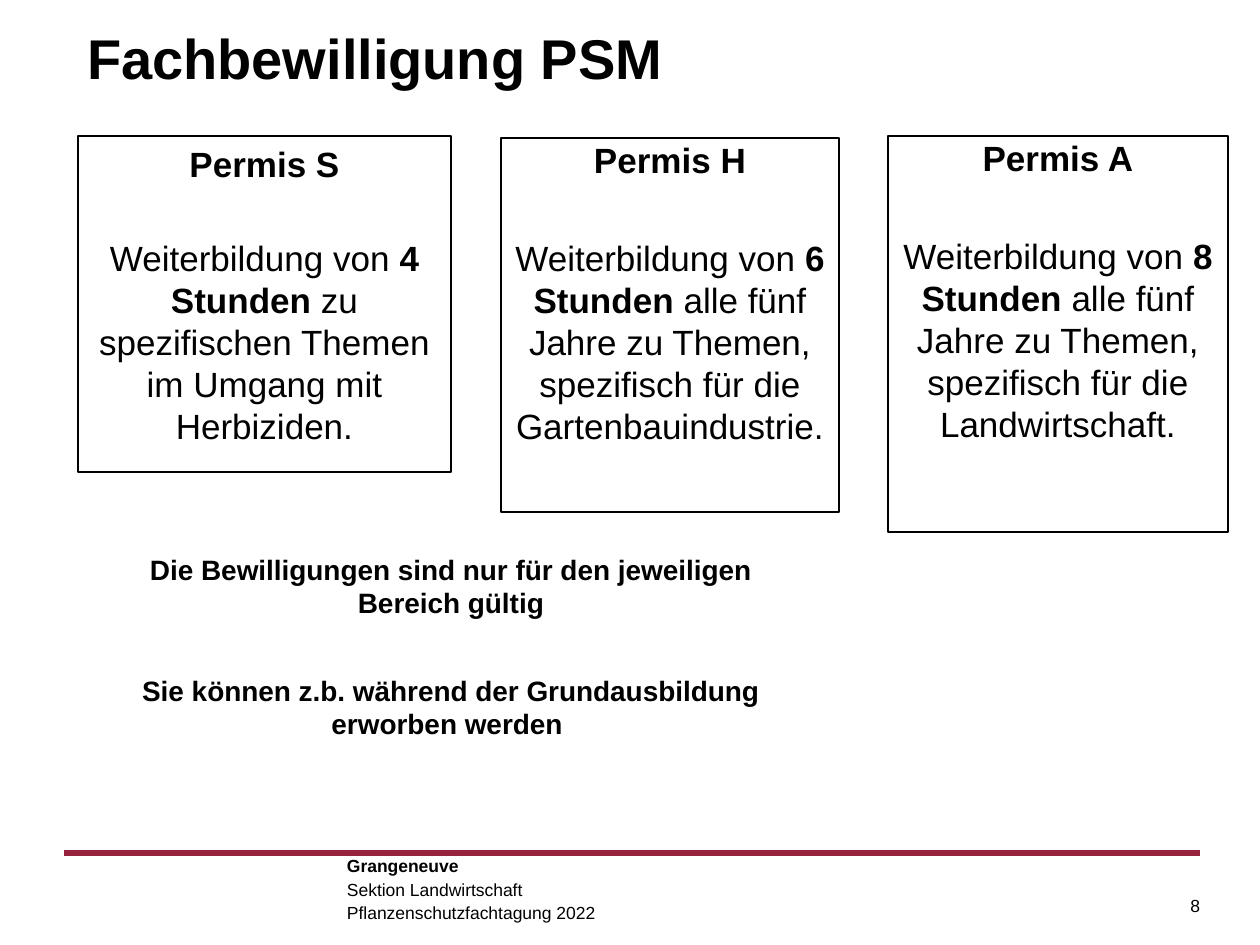
"""Build the slide on the three plant protection permits."""
from lxml import etree
from pptx import Presentation
from pptx.dml.color import RGBColor
from pptx.enum import shapes, text
from pptx.oxml.ns import qn
from pptx.util import Emu, Pt

BLACK = RGBColor(0x00, 0x00, 0x00)
CRIMSON = RGBColor(0x97, 0x23, 0x3F)
LEFT, CENTER, RIGHT = text.PP_ALIGN.LEFT, text.PP_ALIGN.CENTER, text.PP_ALIGN.RIGHT
PX_PER_INCH = 126


def px(n):
    """Turn pixels into EMU."""
    return Emu(round(n * 914400 / PX_PER_INCH))


class SlideBuilder:
    """Hold the style and the current slide."""

    font = "Arial"

    def __init__(self, prs):
        """Add a title-only slide."""
        self.slide = prs.slides.add_slide(prs.slide_layouts[5])

    def frame(self, sp, inset_x=0, inset_y=0):
        """Prepare a wrapped, top-anchored text frame."""
        tf = sp.text_frame
        tf.word_wrap = True
        tf.auto_size = text.MSO_AUTO_SIZE.NONE
        tf.vertical_anchor = text.MSO_ANCHOR.TOP
        tf.margin_left = tf.margin_right = px(inset_x)
        tf.margin_top = tf.margin_bottom = px(inset_y)
        return tf

    def paragraph(self, tf, runs, size, align=LEFT, pitch=None, before=0):
        """Fill the first or a further paragraph with (text, bold) runs."""
        p = tf.add_paragraph() if tf.paragraphs[0].runs else tf.paragraphs[0]
        p.alignment = align
        p.space_before = Pt(before)
        if pitch:
            p.line_spacing = Pt(pitch)
        for content, bold in runs:
            r = p.add_run()
            r.text = content
            r.font.name, r.font.size, r.font.bold = self.font, Pt(size), bold
            r.font.color.rgb = BLACK

    def title(self, content, x, y, w, h):
        """Place and fill the title placeholder."""
        sp = self.slide.shapes.title
        sp.left, sp.top, sp.width, sp.height = map(px, (x, y, w, h))
        self.paragraph(self.frame(sp, 13, 6), [(content, True)], 32, pitch=37)

    def textbox(self, x, y, w, h):
        """Add a text box and return its frame."""
        return self.frame(self.slide.shapes.add_textbox(*map(px, (x, y, w, h))))

    def permit(self, box, insets, gap, letter, hours, rest):
        """Add an outlined box that describes one permit."""
        sp = self.slide.shapes.add_shape(shapes.MSO_SHAPE.RECTANGLE, *map(px, box))
        sp.shadow.inherit = False
        sp.fill.background()
        sp.line.color.rgb = BLACK
        sp.line.width = Pt(0.75)
        tf = self.frame(sp, *insets)
        self.paragraph(tf, [(f"Permis {letter}", True)], 20, CENTER, 24)
        body = [("Weiterbildung von ", False), (f"{hours} Stunden", True), (rest, False)]
        self.paragraph(tf, body, 20, CENTER, 24, gap)

    def rule(self, x1, x2, y):
        """Draw the horizontal footer line."""
        line = self.slide.shapes.add_connector(
            shapes.MSO_CONNECTOR.STRAIGHT, *map(px, (x1, y, x2, y)))
        line.line.color.rgb = CRIMSON
        line.line.width = Pt(3)
        etree.SubElement(line._element.spPr, qn("a:effectLst"))


def main():
    """Build and save the presentation."""
    prs = Presentation()
    prs.slide_width, prs.slide_height = px(1260), px(945)
    s = SlideBuilder(prs)

    s.title("Fachbewilligung PSM", 74, 20, 1135, 66)
    permits = [
        ((78, 136, 373, 336), (13, 6), 30, "S", 4,
         " zu spezifischen Themen im Umgang mit Herbiziden."),
        ((501, 138, 338, 374), (0, 0), 32, "H", 6,
         " alle fünf Jahre zu Themen, spezifisch für die Gartenbauindustrie."),
        ((888, 136, 340, 396), (0, 0), 32, "A", 8,
         " alle fünf Jahre zu Themen, spezifisch für die Landwirtschaft."),
    ]
    for permit in permits:
        s.permit(*permit)

    notes = s.textbox(99, 553, 704, 189)
    for content, gap in (
        ("Die Bewilligungen sind nur für den jeweiligen Bereich gültig", 0),
        ("Sie können z.b. während der Grundausbildung erworben werden ", 31),
    ):
        s.paragraph(notes, [(content, True)], 16, CENTER, 19, gap)

    s.rule(64, 1200, 853)
    footer = s.textbox(347, 853, 661, 70)
    for content, bold in (
        ("Grangeneuve", True),
        ("Sektion Landwirtschaft", False),
        ("Pflanzenschutzfachtagung 2022", False),
    ):
        s.paragraph(footer, [(content, bold)], 10, pitch=13.4)
    s.paragraph(s.textbox(1144, 895, 56, 22), [("8", False)], 10, RIGHT)

    prs.save("out.pptx")


if __name__ == "__main__":
    main()
